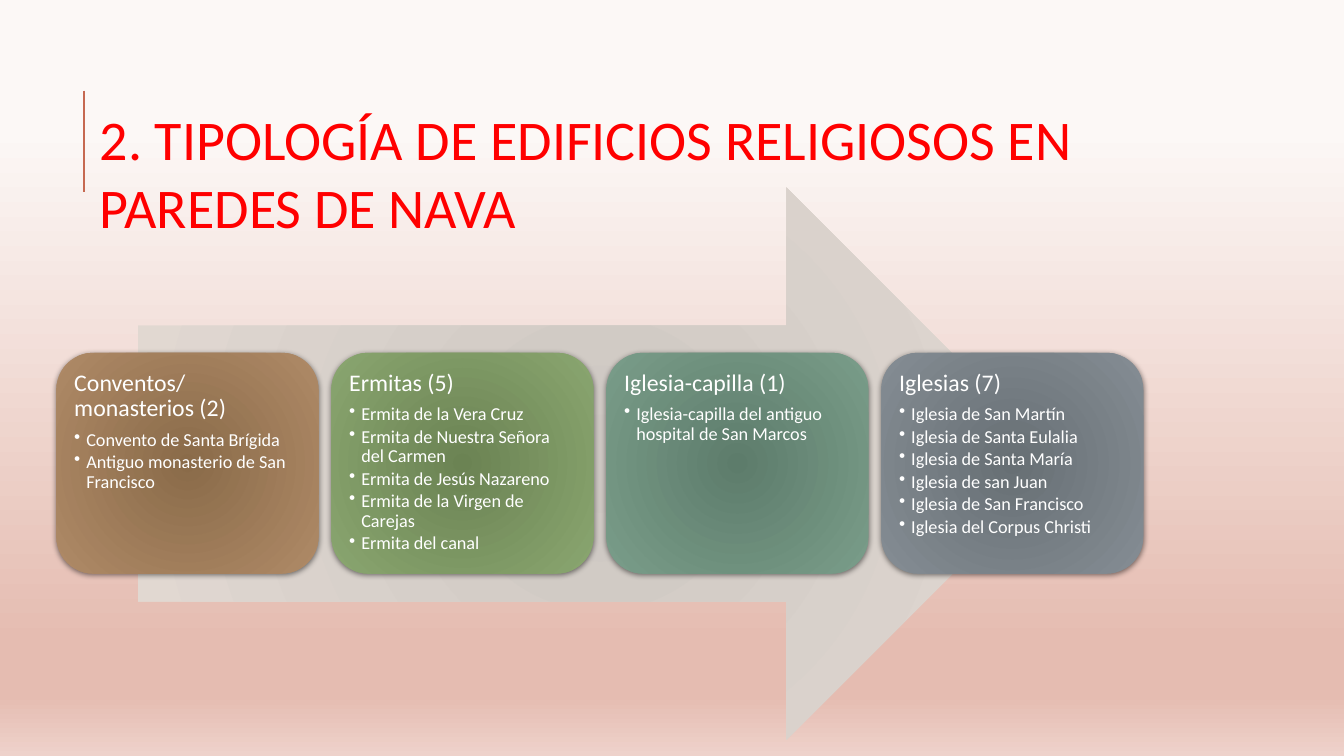
from lxml.etree import SubElement
from pptx import Presentation
from pptx.dml.color import RGBColor
from pptx.enum.shapes import MSO_CONNECTOR as Connector, MSO_SHAPE as Shape
from pptx.enum.text import MSO_ANCHOR as Anchor, MSO_AUTO_SIZE as AutoSize, PP_ALIGN as Align
from pptx.oxml import parse_xml
from pptx.oxml.ns import nsdecls, qn
from pptx.util import Inches, Pt

COLORS = {
    "title": "FF0000", "rule": "C66951", "text": "FFFFFF", "shadow": "000000",
    "sky": "FCF8F6", "rose": "E5BCB1", "floor": "EED2CB",
    "arrow": ("CDC7C2", "E3DAD3"), "brown": ("8A6B49", "AF8A67"),
    "green": ("6B8353", "8AA670"), "teal": ("5D7C6B", "7A9D8A"),
    "gray": ("676F74", "858D94"),
}
RADIAL = '<a:path path="circle"><a:fillToRect l="50000" t="50000" r="50000" b="50000"/></a:path>'
DOWNWARD = '<a:lin ang="5400000" scaled="0"/>'

TITLE = "2. TIPOLOGÍA DE EDIFICIOS RELIGIOSOS EN PAREDES DE NAVA"
BUILDING_TYPES = [
    ("Conventos/monasterios (2)", "brown",
     ["Convento de Santa Brígida", "Antiguo monasterio de San Francisco"]),
    ("Ermitas (5)", "green",
     ["Ermita de la Vera Cruz", "Ermita de Nuestra Señora del Carmen",
      "Ermita de Jesús Nazareno", "Ermita de la Virgen de Carejas", "Ermita del canal"]),
    ("Iglesia-capilla (1)", "teal",
     ["Iglesia-capilla del antiguo hospital de San Marcos"]),
    ("Iglesias (7)", "gray",
     ["Iglesia de San Martín", "Iglesia de Santa Eulalia", "Iglesia de Santa María",
      "Iglesia de san Juan", "Iglesia de San Francisco", "Iglesia del Corpus Christi"]),
]
CARD_LEFT, CARD_PITCH = 0.56, 2.727


class TypologySlide:
    """Holds the style and the current slide, and draws each kind of element."""

    def __init__(self, deck, font="Calibri"):
        self.font = font
        self.slide = deck.slides.add_slide(deck.slide_layouts[5])

    def style(self, paragraph, size, color):
        paragraph.alignment = Align.LEFT
        for run in paragraph.runs:
            run.font.name, run.font.size = self.font, Pt(size)
            run.font.color.rgb = RGBColor.from_string(COLORS[color])

    def gradient(self, solid, stops, direction):
        marks = "".join(f'<a:gs pos="{position * 1000}"><a:srgbClr val="{color}"/></a:gs>'
                        for position, color in stops)
        solid.getparent().replace(solid, parse_xml(
            f'<a:gradFill {nsdecls("a")} rotWithShape="1"><a:gsLst>{marks}</a:gsLst>{direction}</a:gradFill>'))

    def background(self, stops):
        self.slide.background.fill.solid()
        solid = self.slide.element.xpath(".//p:bgPr/a:solidFill")[0]
        self.gradient(solid, [(position, COLORS[name]) for position, name in stops], DOWNWARD)

    def title(self, text, left, top, width, height):
        heading = self.slide.shapes.title
        heading.left, heading.top = Inches(left), Inches(top)
        heading.width, heading.height = Inches(width), Inches(height)
        frame = heading.text_frame
        frame.text = text
        frame.word_wrap, frame.auto_size = True, AutoSize.NONE
        frame.vertical_anchor = Anchor.TOP
        self.style(frame.paragraphs[0], 40, "title")

    def rule(self, x, top, bottom):
        line = self.slide.shapes.add_connector(
            Connector.STRAIGHT, Inches(x), Inches(top), Inches(x), Inches(bottom))
        line.line.color.rgb = RGBColor.from_string(COLORS["rule"])
        line.line.width = Pt(1.5)
        SubElement(line.element.spPr, qn("a:effectLst"))

    def block(self, kind, colors, left, top, width, height):
        block = self.slide.shapes.add_shape(
            kind, Inches(left), Inches(top), Inches(width), Inches(height))
        block.shadow.inherit = False
        block.line.fill.background()
        block.fill.solid()
        solid = block.element.xpath("./p:spPr/a:solidFill")[0]
        self.gradient(solid, zip((0, 100), COLORS[colors]), RADIAL)
        return block

    def cast_shadow(self, block):
        block.element.spPr.find(qn("a:effectLst")).append(parse_xml(
            f'<a:outerShdw {nsdecls("a")} blurRad="{Pt(4)}" dist="{Pt(1)}" dir="5400000" rotWithShape="0">'
            f'<a:srgbClr val="{COLORS["shadow"]}"><a:alpha val="50000"/></a:srgbClr></a:outerShdw>'))

    def bullet(self, paragraph):
        properties = paragraph._p.get_or_add_pPr()
        properties.set("marL", str(Inches(0.12)))
        properties.set("indent", str(Inches(-0.12)))
        SubElement(properties, qn("a:buChar")).set("char", "•")
        paragraph.level = 1

    def card(self, heading, colors, buildings, left):
        card = self.block(Shape.ROUNDED_RECTANGLE, colors, left, 3.5, 2.6, 2.19)
        self.cast_shadow(card)
        frame = card.text_frame
        frame.word_wrap, frame.vertical_anchor = True, Anchor.TOP
        frame.margin_left = frame.margin_right = Inches(0.07)
        frame.margin_top = frame.margin_bottom = Inches(0.07)
        frame.text = "\n".join([heading, *buildings])
        for index, paragraph in enumerate(frame.paragraphs):
            if index:
                self.bullet(paragraph)
            paragraph.line_spacing = 0.9
            paragraph.space_after = Pt(2 if index else 6)
            self.style(paragraph, 13 if index else 17, "text")


def main():
    deck = Presentation()
    deck.slide_width, deck.slide_height = Inches(13.33), Inches(7.5)
    page = TypologySlide(deck)
    page.background([(17, "sky"), (85, "rose"), (92, "rose"), (100, "floor")])
    page.rule(0.83, 0.9, 1.9)
    page.title(TITLE, 0.89, 0.99, 11.79, 1.45)
    page.block(Shape.RIGHT_ARROW, "arrow", 1.37, 1.86, 9.17, 5.48)
    for index, (heading, colors, buildings) in enumerate(BUILDING_TYPES):
        page.card(heading, colors, buildings, CARD_LEFT + index * CARD_PITCH)
    deck.save("out.pptx")


if __name__ == "__main__":
    main()
